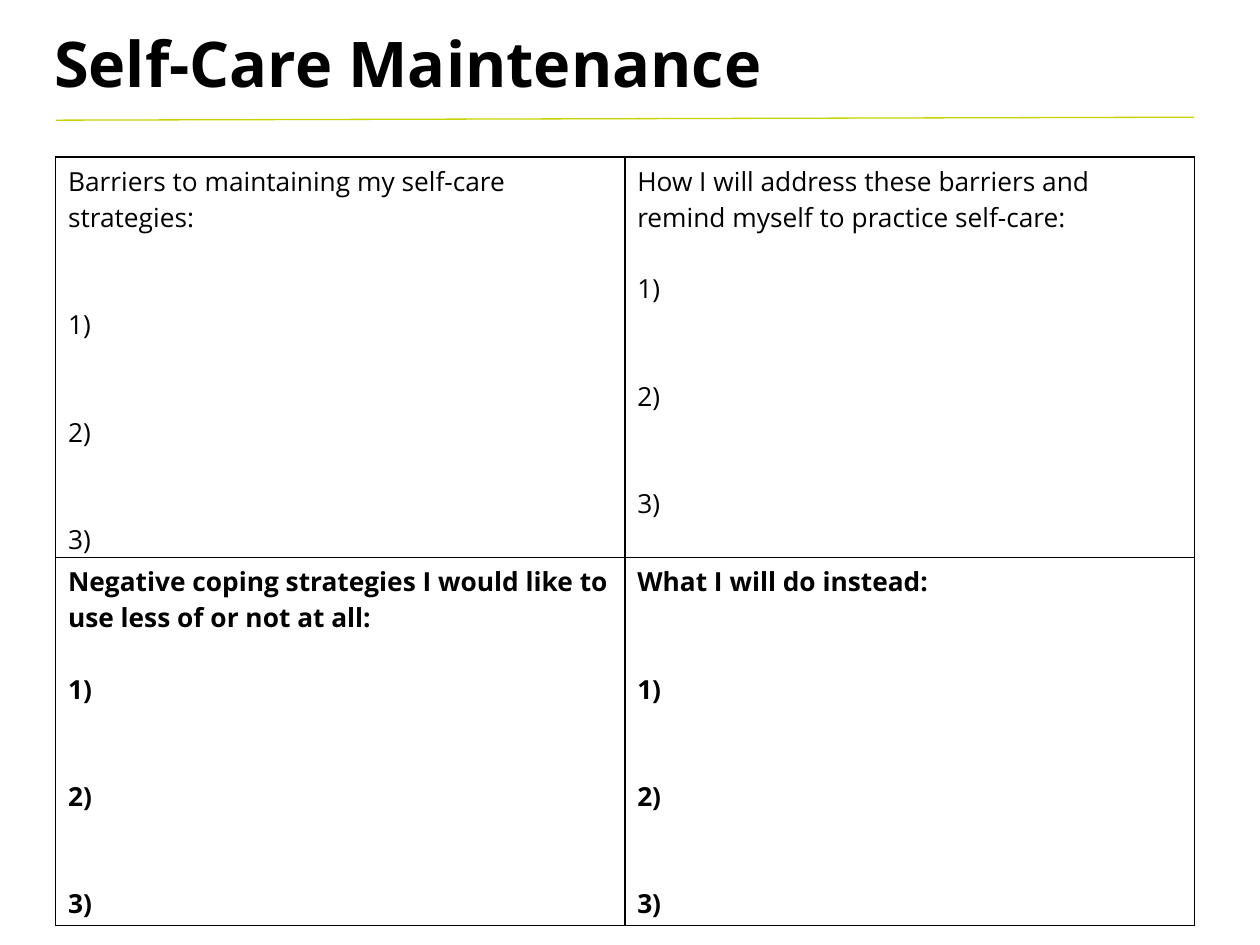
from lxml import etree
from pptx import Presentation
from pptx.dml.color import RGBColor
from pptx.enum.shapes import MSO_CONNECTOR
from pptx.enum.text import MSO_ANCHOR, MSO_AUTO_SIZE, PP_ALIGN
from pptx.oxml.ns import qn
from pptx.util import Cm, Pt

STRAIGHT = MSO_CONNECTOR.STRAIGHT
TOP, LEFT, NO_FIT = MSO_ANCHOR.TOP, PP_ALIGN.LEFT, MSO_AUTO_SIZE.NONE

FONT, BLACK, LIME = "Open Sans", "000000", "C6D301"
TITLE = "Self-Care Maintenance"
NUMBERS = ["1)", "2)", "3)"]
LINE_PITCH = 27.24
ITEM_GAP = 2

# (prompt, blank lines before the first number)
PROMPTS = [
    [("Barriers to maintaining my self-care strategies:", 2),
     ("How I will address these barriers and remind myself to practice self-care:", 1)],
    [("Negative coping strategies I would like to use less of or not at all:", 1),
     ("What I will do instead:", 2)],
]
ROW_BOLD = [False, True]
ROW_HEIGHTS = [10.72, 9.9]
GRID_LEFT, GRID_TOP, GRID_WIDTH = 1.5, 4.22, 30.6


def rgb(value):
    """Turn a hex string into a colour."""
    return RGBColor.from_string(value)


def style(paragraph, size, bold):
    """Format a paragraph and its runs."""
    paragraph.alignment = LEFT
    for run in paragraph.runs:
        run.font.name = FONT
        run.font.size = Pt(size)
        run.font.bold = bold
        run.font.color.rgb = rgb(BLACK)


def add_borders(cell, color, width):
    """Draw a solid line on all four sides of a cell."""
    properties = cell._tc.get_or_add_tcPr()
    for position, side in enumerate(("a:lnL", "a:lnR", "a:lnT", "a:lnB")):
        border = etree.Element(qn(side), w=str(Pt(width)))
        fill = etree.SubElement(border, qn("a:solidFill"))
        etree.SubElement(fill, qn("a:srgbClr"), val=color)
        properties.insert(position, border)


def fill_cell(cell, prompt, first_gap, bold):
    """Write a prompt and its spaced numbers into a cell."""
    cell.fill.background()
    cell.margin_left = cell.margin_right = Cm(0.33)
    cell.margin_top, cell.margin_bottom = Cm(0.18), Cm(0)
    cell.vertical_anchor = TOP
    cell.text_frame.text = "\n".join([prompt, *NUMBERS])
    gaps = [0, first_gap, ITEM_GAP, ITEM_GAP]
    for paragraph, gap in zip(cell.text_frame.paragraphs, gaps):
        paragraph.space_before = Pt(round(gap * LINE_PITCH, 1))
        style(paragraph, 20, bold)
    add_borders(cell, BLACK, 1)


def add_title(slide):
    """Place the heading in the title placeholder."""
    title = slide.shapes.title
    title.left, title.top, title.width, title.height = Cm(1.2), Cm(0.53), Cm(25.25), Cm(2.31)
    title.text_frame.text = TITLE
    title.text_frame.auto_size = NO_FIT
    title.text_frame.vertical_anchor = TOP
    style(title.text_frame.paragraphs[0], 48, True)


def add_grid(slide):
    """Build the two-by-two worksheet table."""
    grid = slide.shapes.add_table(
        len(PROMPTS), len(PROMPTS[0]), Cm(GRID_LEFT), Cm(GRID_TOP),
        Cm(GRID_WIDTH), Cm(sum(ROW_HEIGHTS))).table
    grid.first_row = grid.horz_banding = False
    for row, prompts in enumerate(PROMPTS):
        grid.rows[row].height = Cm(ROW_HEIGHTS[row])
        for column, (prompt, first_gap) in enumerate(prompts):
            fill_cell(grid.cell(row, column), prompt, first_gap, ROW_BOLD[row])


def add_rule(slide):
    """Draw the lime line under the heading."""
    rule = slide.shapes.add_connector(
        STRAIGHT, Cm(GRID_LEFT), Cm(3.23), Cm(GRID_LEFT + GRID_WIDTH), Cm(3.15))
    rule.line.color.rgb = rgb(LIME)
    rule.line.width = Pt(1)
    etree.SubElement(rule._element.spPr, qn("a:effectLst"))


def main():
    """Build and save the slide."""
    deck = Presentation()
    deck.slide_width, deck.slide_height = Cm(33.87), Cm(25.4)
    slide = deck.slides.add_slide(deck.slide_layouts[5])
    add_title(slide)
    add_grid(slide)
    add_rule(slide)
    deck.save("out.pptx")


if __name__ == "__main__":
    main()
